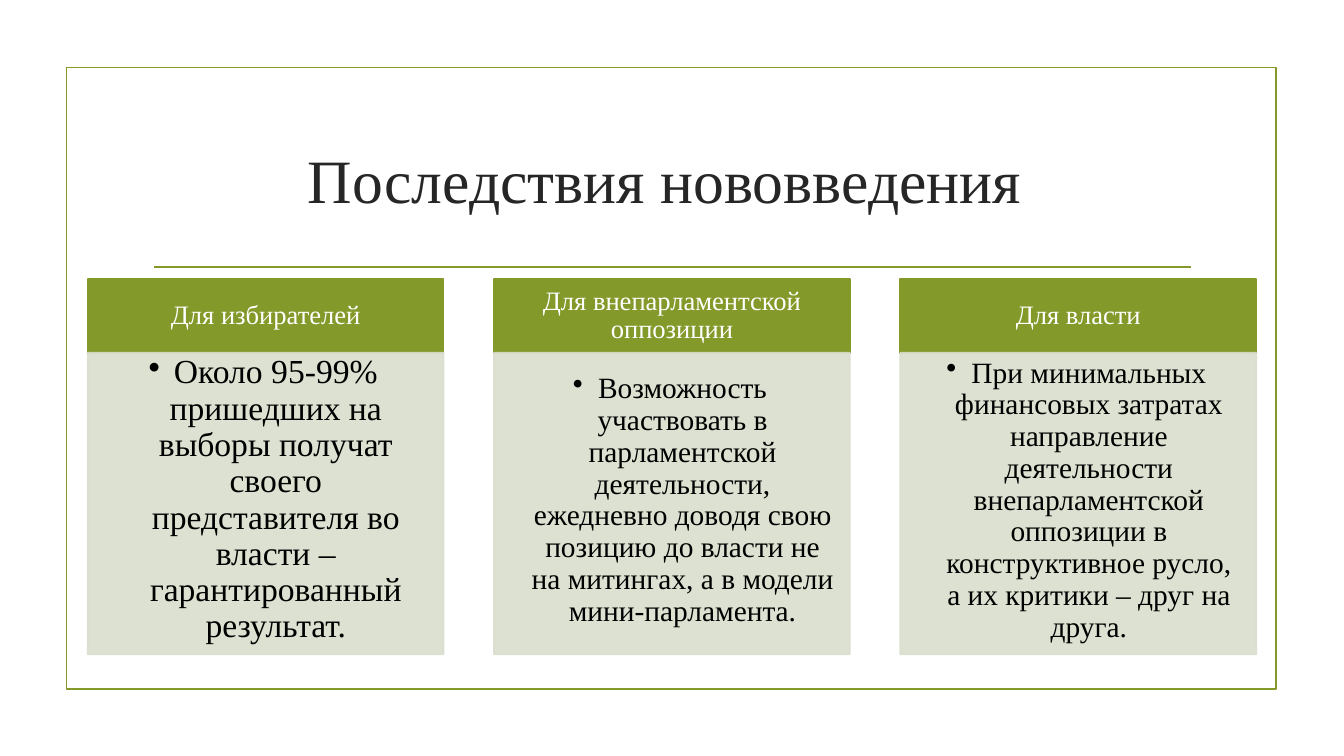
from lxml import etree
from pptx import Presentation
from pptx.dml.color import RGBColor
from pptx.enum.shapes import MSO_CONNECTOR as Connector, MSO_SHAPE as Shape
from pptx.enum.text import MSO_ANCHOR as Anchor, MSO_AUTO_SIZE as AutoSize, PP_ALIGN as Align
from pptx.oxml.ns import qn
from pptx.util import Inches, Pt

CARDS = [
    ("Для избирателей",
     "Около 95-99% пришедших на выборы получат своего представителя во власти – "
     "гарантированный результат.",
     24, (0.14, 0.14, 0.19, 0.21)),
    ("Для внепарламентской оппозиции",
     "Возможность участвовать в парламентской деятельности, ежедневно доводя свою "
     "позицию до власти не на митингах, а в модели мини-парламента.",
     21, (0.12, 0.12, 0.16, 0.18)),
    ("Для власти",
     "При минимальных финансовых затратах направление деятельности внепарламентской "
     "оппозиции в конструктивное русло, а их критики – друг на друга.",
     21, (0.12, 0.12, 0.16, 0.18)),
]


def color(value):
    return RGBColor.from_string(value)


class SlideBuilder:
    """Holds the style and the slide; places are percentages of the slide's size."""

    font_name = "Times New Roman"
    green, pale, dark = "83992A", "D9DECD", "262626"
    line_width = Pt(1.25)

    def __init__(self, presentation):
        self.width, self.height = presentation.slide_width, presentation.slide_height
        self.slide = presentation.slides.add_slide(presentation.slide_layouts[5])

    def place(self, *shares):
        """Turn alternating horizontal and vertical percentages into lengths."""
        sizes = (self.width, self.height) * 2
        return [round(size * share / 100) for size, share in zip(sizes, shares)]

    def set_text(self, shape, text, *, size, fill, margins=None, spacing=None, bullet=False):
        frame = shape.text_frame
        frame.auto_size = AutoSize.NONE
        frame.word_wrap = True
        frame.vertical_anchor = Anchor.MIDDLE
        if margins:
            (frame.margin_left, frame.margin_top,
             frame.margin_right, frame.margin_bottom) = map(Inches, margins)
        frame.text = text
        paragraph = frame.paragraphs[0]
        paragraph.alignment = Align.CENTER
        if spacing:
            paragraph.line_spacing = spacing
        if bullet:
            properties = paragraph._p.get_or_add_pPr()
            properties.set("marL", str(Inches(0.25)))
            properties.set("indent", str(-Inches(0.25)))
            etree.SubElement(properties, qn("a:buChar")).set("char", "•")
        font = paragraph.runs[0].font
        font.name, font.size = self.font_name, Pt(size)
        font.color.rgb = color(fill)

    def title(self, text, *shares):
        title = self.slide.shapes.title
        title.left, title.top, title.width, title.height = self.place(*shares)
        self.set_text(title, text, size=44, fill=self.dark)

    def rectangle(self, *shares, line, fill=None, opacity=100):
        shape = self.slide.shapes.add_shape(Shape.RECTANGLE, *self.place(*shares))
        shape.shadow.inherit = False
        shape.line.color.rgb = color(line)
        shape.line.width = self.line_width
        if fill:
            shape.fill.solid()
            shape.fill.fore_color.rgb = color(fill)
        else:
            shape.fill.background()
        if opacity < 100:
            for tint in shape._element.spPr.iter(qn("a:srgbClr")):
                etree.SubElement(tint, qn("a:alpha")).set("val", str(opacity * 1000))
        return shape

    def rule(self, *shares):
        line = self.slide.shapes.add_connector(Connector.STRAIGHT, *self.place(*shares))
        line.line.color.rgb = color(self.green)
        line.line.width = self.line_width
        etree.SubElement(line._element.spPr, qn("a:effectLst"))

    def card(self, left, heading, body, body_size, body_margins):
        top, width, heading_height, body_height = 36.93, 26.48, 9.74, 39.87
        header = self.rectangle(left, top, width, heading_height,
                                line=self.green, fill=self.green)
        self.set_text(header, heading, size=19, fill="FFFFFF", spacing=0.9,
                      margins=(0.15, 0.08, 0.15, 0.08))
        panel = self.rectangle(left, top + heading_height, width, body_height,
                               line=self.pale, fill=self.pale, opacity=90)
        self.set_text(panel, body, size=body_size, fill="000000", spacing=0.9,
                      margins=body_margins, bullet=True)


def main():
    presentation = Presentation()
    presentation.slide_width, presentation.slide_height = Inches(13.33), Inches(7.5)
    builder = SlideBuilder(presentation)
    builder.rectangle(4.95, 8.93, 90.02, 82.27, line=builder.green)
    builder.rule(11.48, 35.33, 88.6, 35.33)
    # The closing space shifts the centred title slightly to the left.
    builder.title("Последствия нововведения ", 10.65, 14.13, 78.77, 19.07)
    first_left, pitch = 6.53, 30.23
    for column, card in enumerate(CARDS):
        builder.card(first_left + column * pitch, *card)
    presentation.save("out.pptx")


if __name__ == "__main__":
    main()
